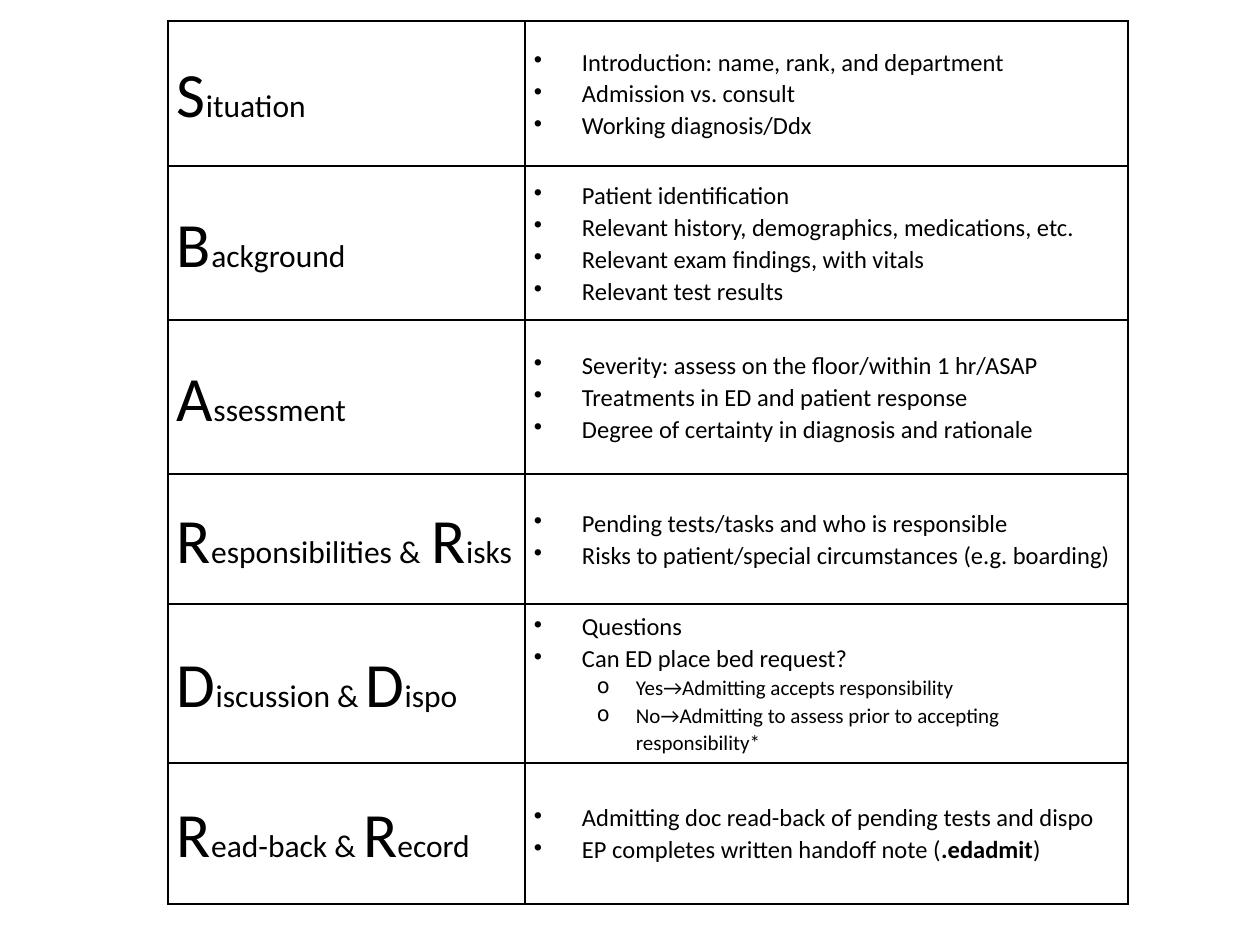
from lxml.etree import SubElement
from pptx import Presentation
from pptx.dml.color import RGBColor
from pptx.enum.text import MSO_ANCHOR as Anchor
from pptx.oxml.ns import qn
from pptx.util import Emu, Pt

PX = 914400 / 126
BLACK = "000000"
BULLETS = {0: ("•", 48, -48, 14), 1: ("o", 102, -39, 12)}
ROWS = [
    (145, [("S", 36), ("ituation", 18)],
     [(0, "Introduction: name, rank, and department"),
      (0, "Admission vs. consult"),
      (0, "Working diagnosis/Ddx")]),
    (154, [("B", 36), ("ackground", 18)],
     [(0, "Patient identification"),
      (0, "Relevant history, demographics, medications, etc."),
      (0, "Relevant exam findings, with vitals"),
      (0, "Relevant test results")]),
    (154, [("A", 36), ("ssessment", 18)],
     [(0, "Severity: assess on the floor/within 1 hr/ASAP"),
      (0, "Treatments in ED and patient response"),
      (0, "Degree of certainty in diagnosis and rationale")]),
    (130, [("R", 36), ("esponsibilities &", 18), (" ", 28), ("R", 36), ("isks", 18)],
     [(0, "Pending tests/tasks and who is responsible"),
      (0, "Risks to patient/special circumstances (e.g. boarding)")]),
    (159, [("D", 36), ("iscussion & ", 18), ("D", 36), ("ispo", 18)],
     [(0, "Questions"),
      (0, "Can ED place bed request?"),
      (1, "Yes→Admitting accepts responsibility"),
      (1, "No→Admitting to assess prior to accepting responsibility*")]),
    (141, [("R", 36), ("ead-back & ", 18), ("R", 36), ("ecord", 18)],
     [(0, "Admitting doc read-back of pending tests and dispo"),
      (0, "EP completes written handoff note (", ".edadmit", ")")]),
]


def px(count):
    return Emu(round(count * PX))


def add_span(para, text, size, bold=False):
    span = para.add_run()
    span.text = text
    span.font.name = "Calibri"
    span.font.size = Pt(size)
    span.font.bold = bold
    span.font.color.rgb = RGBColor.from_string(BLACK)


deck = Presentation()
deck.slide_width = px(1260)
deck.slide_height = px(945)
page = deck.slides.add_slide(deck.slide_layouts[6])

heights = [row[0] for row in ROWS]
widths = [357, 603]
table = page.shapes.add_table(
    len(ROWS), 2, px(168), px(21), px(sum(widths)), px(sum(heights))).table
table.first_row = False
table.horz_banding = False
for column, width in zip(table.columns, widths):
    column.width = px(width)
for row, height in zip(table.rows, heights):
    row.height = px(height)

for cell in table.iter_cells():
    cell.vertical_anchor = Anchor.MIDDLE
    cell.margin_left = cell.margin_right = px(9)
    cell.margin_top = cell.margin_bottom = 0
    properties = cell._tc.get_or_add_tcPr()
    for side in ("lnL", "lnR", "lnT", "lnB"):
        border = SubElement(properties, qn(f"a:{side}"), w=str(Pt(1)))
        fill = SubElement(border, qn("a:solidFill"))
        SubElement(fill, qn("a:srgbClr"), val=BLACK)
    cell.fill.background()

for index, (height, heading, items) in enumerate(ROWS):
    para = table.cell(index, 0).text_frame.paragraphs[0]
    para.line_spacing = 1.07
    for text, size in heading:
        add_span(para, text, size)

    frame = table.cell(index, 1).text_frame
    for number, (level, *texts) in enumerate(items):
        para = frame.add_paragraph() if number else frame.paragraphs[0]
        mark, margin, indent, size = BULLETS[level]
        para.level = level
        para.line_spacing = 1.07
        properties = para._p.get_or_add_pPr()
        properties.set("marL", str(px(margin)))
        properties.set("indent", str(px(indent)))
        SubElement(properties, qn("a:buChar"), char=mark)
        for text in texts:
            add_span(para, text, size, bold=text == ".edadmit")

deck.save("out.pptx")
